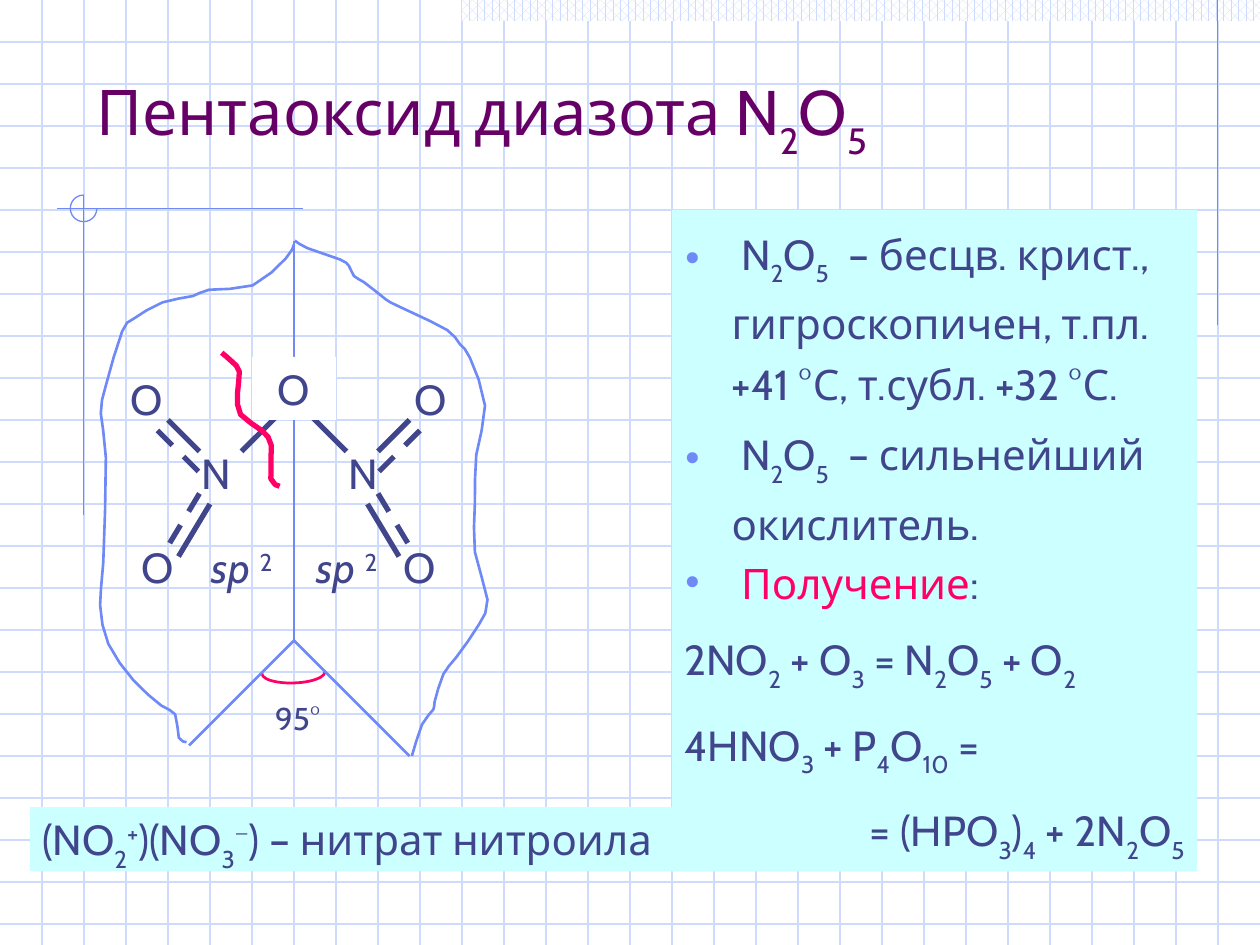
"""Build a slide on dinitrogen pentoxide: molecule geometry, properties and synthesis."""
import pptx
import pptx.dml.color
import pptx.enum.dml
import pptx.enum.shapes
import pptx.enum.text
import pptx.oxml
import pptx.oxml.ns
import pptx.util
from lxml import etree

Pt = pptx.util.Pt
SHAPE = pptx.enum.shapes.MSO_SHAPE
ALIGN = pptx.enum.text.PP_ALIGN
ANCHOR = pptx.enum.text.MSO_ANCHOR
qn = pptx.oxml.ns.qn
HEX = {"title": "660066", "text": "40458C", "blue": "6F89F7", "pale": "CFDBFD",
       "pink": "FF0066", "panel": "CCFFFF", "white": "FFFFFF", "sand": "ECD882"}
RGB = {k: pptx.dml.color.RGBColor.from_string(v) for k, v in HEX.items()}

prs = pptx.Presentation()
prs.slide_width, prs.slide_height = Pt(720), Pt(540)
s = prs.slides.add_slide(prs.slide_layouts[6])


def line(x1, y1, x2, y2, color, width, dashed=False):
    c = s.shapes.add_connector(pptx.enum.shapes.MSO_CONNECTOR.STRAIGHT, Pt(x1), Pt(y1), Pt(x2), Pt(y2))
    c.line.color.rgb = RGB[color]
    c.line.width = Pt(width)
    if dashed:
        c.line.dash_style = pptx.enum.dml.MSO_LINE.DASH
    etree.SubElement(c._element.spPr, qn("a:effectLst"))


def text(box, paragraphs, size=24, color="text", align=ALIGN.LEFT, fill=None, anchor=ANCHOR.TOP):
    """Write runs split by |, marked _ subscript, ^ superscript, / italic or ! pink."""
    box = [Pt(v) for v in box]
    if fill:
        sp = s.shapes.add_shape(SHAPE.RECTANGLE, *box)
        sp.shadow.inherit = False
        sp.fill.solid()
        sp.fill.fore_color.rgb = RGB[fill]
        sp.line.fill.background()
    else:
        sp = s.shapes.add_textbox(*box)
    tf = sp.text_frame
    tf.word_wrap = True
    tf.vertical_anchor = anchor
    for i, content in enumerate(paragraphs):
        p = tf.add_paragraph() if i else tf.paragraphs[0]
        p.alignment = align
        for part in content.split("|"):
            mark = part[0] if part[0] in "_^/!" else ""
            r = p.add_run()
            r.text = part[len(mark):]
            fmt = {"size": Pt(size), "name": "Times New Roman" if part == "^−" else "Cabin",
                   "italic": mark == "/"}
            for k, v in fmt.items():
                setattr(r.font, k, v)
            r.font.color.rgb = RGB["pink" if mark == "!" else color]
            if mark in ("_", "^"):
                r.font._element.set("baseline", "-30000" if mark == "_" else "30000")
    return tf


GRID = 24
for y in range(GRID, 540, GRID):
    line(0, y, 720, y, "pale", 0.75)
for x in range(GRID, 720, GRID):
    line(x, 0, x, 540, "pale", 0.75)

sp = s.shapes.add_shape(SHAPE.RECTANGLE, Pt(264), Pt(0), Pt(456), Pt(12))
sp.shadow.inherit = False
sp.fill.patterned()
sp.fill.pattern = pptx.enum.dml.MSO_PATTERN.PERCENT_60
sp.fill.fore_color.rgb = RGB["pale"]
sp.fill.back_color.rgb = RGB["white"]
sp.line.fill.background()

for ends in ((695.9, 0, 695.9, 186), (173, 119.3, 32.5, 119.3), (47.9, 111.5, 47.9, 294.5)):
    line(*ends, "blue", 0.75)

sp = s.shapes.add_shape(SHAPE.ARC, Pt(40.2), Pt(111.5), Pt(15.2), Pt(15.2))
sp.shadow.inherit = False
sp.adjustments[0], sp.adjustments[1] = 0, 162
sp.fill.background()
sp.line.color.rgb = RGB["blue"]
sp.line.width = Pt(0.75)

text((48, 24, 612, 72), ["Пентаоксид диазота N|_2|O|_5"], 36, "title", anchor=ANCHOR.BOTTOM)

body = [
    (" N|_2|O|_5| – бесцв. крист., гигроскопичен, т.пл. +41 °С, т.субл. +32 °С.", 1.2, True),
    (" N|_2|O|_5| – сильнейший окислитель.", 1.2, True),
    (" |!Получение|:", 1.0, True),
    ("2NO|_2| + O|_3| = N|_2|O|_5| + O|_2", 1.3, False),
    ("4HNO|_3| + P|_4|O|_10| =", 1.3, False),
    ("= (HPO|_3|)|_4| + 2N|_2|O|_5", 1.3, False),
]
tf = text((384, 120, 300, 378), [row[0] for row in body], fill="panel")
for i, (p, (_, spacing, bullet)) in enumerate(zip(tf.paragraphs, body)):
    p.line_spacing = spacing
    p.space_before = Pt(4.8 if i else 0)
    pPr = p._p.get_or_add_pPr()
    pPr.set("marL", str(Pt(27)))
    pPr.set("indent", str(-Pt(27)))
    if bullet:
        clr = etree.SubElement(pPr, qn("a:buClr"))
        etree.SubElement(clr, qn("a:srgbClr")).set("val", HEX["blue"])
        etree.SubElement(pPr, qn("a:buSzPct")).set("val", "110000")
        etree.SubElement(pPr, qn("a:buFont")).set("typeface", "Times New Roman")
        etree.SubElement(pPr, qn("a:buChar")).set("char", "•")
    else:
        etree.SubElement(pPr, qn("a:buNone"))
for p in tf.paragraphs[:2]:
    p.runs[3].font._element.set("spc", "570")
tf.paragraphs[-1].alignment = ALIGN.RIGHT

MIRROR = 330
atoms = [("N", 108, 252, 30, ALIGN.LEFT), ("O", 66, 210, 36, ALIGN.CENTER), ("O", 72, 306, 36, ALIGN.CENTER)]
bonds = [(96, 240, 114, 258, False), (90, 246, 114, 270, True),
         (120, 288, 102, 318, False), (114, 282, 96, 312, True)]
for flipped in (False, True):
    for label, x, y, w, align in atoms:
        text((MIRROR - x - w if flipped else x, y, w, 36), [label], align=align)
    for x1, y1, x2, y2, dashed in bonds:
        if flipped:
            x1, x2 = MIRROR - x1, MIRROR - x2
        line(x1, y1, x2, y2, "text", 3, dashed)
line(138, 258, 162, 234, "text", 3)
line(198, 258, 174, 234, "text", 3)

sp = s.shapes.add_shape(SHAPE.MOON, Pt(164.9), Pt(369.4), Pt(5.8), Pt(36))
sp.shadow.inherit = False
sp.rotation = 268.2
sp.adjustments[0] = 0.013
sp.fill.solid()
sp.fill.fore_color.rgb = RGB["sand"]
sp.line.color.rgb = RGB["pink"]
sp.line.width = Pt(1.5)
text((150, 396, 48, 29), ["95°"], 18)

for ends in ((168, 138, 168, 366), (168, 366, 234, 432), (168, 366, 108, 426)):
    line(*ends, "blue", 1.5)

for x, w in ((174, 72), (114, 60)):
    text((x, 306, w, 36), ["/sp |^2"])
text((144, 204, 48, 36), ["O"], align=ALIGN.CENTER, fill="white")
text((17, 461.3, 392, 36.5), ["(NO|_2|^+|)(NO|_3|^−|) – нитрат нитроила"], fill="panel")

left_edge = [(168, 139.7), (163.4, 147.6), (144.4, 163.1), (119.5, 165.6), (110.2, 169.2), (92.9, 172.8),
             (76.3, 182.2), (69.8, 189.4), (60.5, 220.3), (57.6, 236.2), (60.5, 261.4), (59, 321.8),
             (57.2, 345.7), (61.9, 367.9), (76.3, 388.8), (92.2, 403.2), (100.1, 408.2), (102.2, 421.6),
             (106.6, 424.1)]
right_edge = [(168.5, 137.5), (175.7, 141.8), (194.4, 148.3), (199.4, 151.9), (202.3, 157.7), (208.1, 161.3),
              (218.2, 169.2), (223.2, 172.8), (235.4, 178.6), (255.6, 188.6), (262.8, 196.6), (268.6, 204.5),
              (277.2, 231.8), (272.2, 259.9), (271.4, 287.3), (271.4, 315.4), (278.6, 342.7), (273.6, 357.1),
              (260.6, 375.8), (253.4, 385.2), (248.4, 401), (247.7, 405.4), (241.2, 414), (235.4, 432)]
cleavage = [(126.7, 201.6), (132.5, 206.6), (136.8, 212.4), (135.7, 225), (137.5, 236.9), (149.8, 246.2),
            (155, 254.4), (154.8, 273.6), (159.8, 277.9)]
STEPS = 2
for knots, color, width in ((left_edge, "blue", 1.5), (right_edge, "blue", 1.5), (cleavage, "pink", 3)):
    padded = [knots[0], *knots, knots[-1]]
    smooth = []
    for quad in zip(padded, padded[1:], padded[2:], padded[3:]):
        for t in (n / STEPS for n in range(1, STEPS + 1)):
            smooth.append(tuple(
                Pt(b + t * (c - a) / 2 + t**2 * (2 * a - 5 * b + 4 * c - d) / 2 + t**3 * (3 * b - a - 3 * c + d) / 2)
                for a, b, c, d in zip(*quad)))
    fb = s.shapes.build_freeform(Pt(knots[0][0]), Pt(knots[0][1]))
    fb.add_line_segments(smooth, close=False)
    sp = fb.convert_to_shape()
    sp.shadow.inherit = False
    sp.fill.background()
    sp.line.color.rgb = RGB[color]
    sp.line.width = Pt(width)

prs.save("out.pptx")
